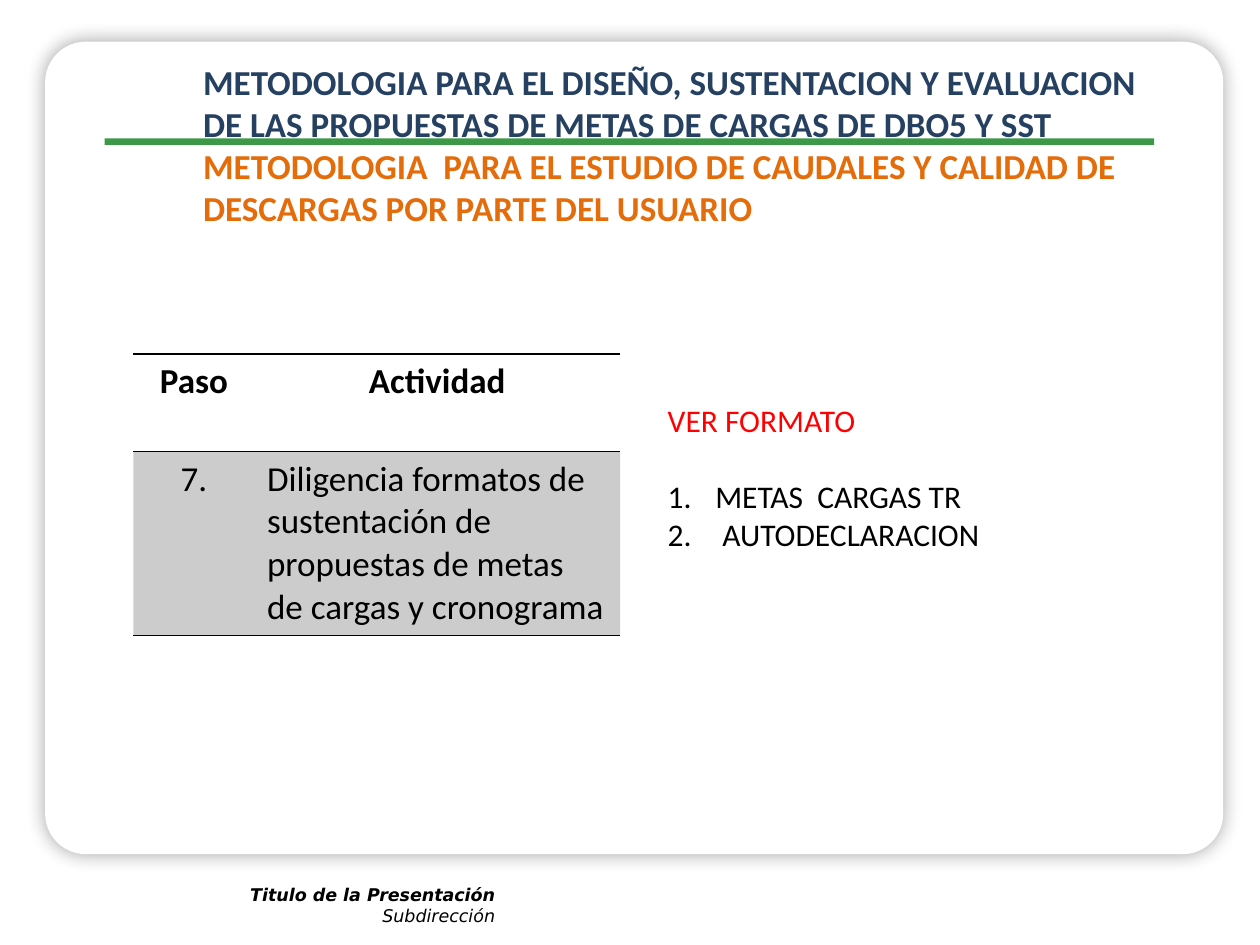
from lxml.etree import SubElement
from pptx import Presentation
from pptx.dml.color import RGBColor
from pptx.enum.shapes import MSO_SHAPE as Shape
from pptx.enum.text import MSO_ANCHOR as Anchor, PP_ALIGN as Align
from pptx.oxml import parse_xml
from pptx.oxml.ns import nsdecls, qn
from pptx.util import Cm, Pt

COLORS = {
    "white": "FFFFFF",
    "green": "3D9948",
    "navy": "254061",
    "orange": "E46C0A",
    "red": "FF0000",
    "black": "000000",
}


def style(font, color, **values):
    """Colour a font and set its other attributes."""
    font.color.rgb = RGBColor.from_string(COLORS[color])
    for attribute, value in values.items():
        setattr(font, attribute, value)


def set_border(cell, position, side, visible):
    """Put a 1 pt black or invisible line on one side of a cell."""
    if visible:
        paint = f'<a:solidFill><a:srgbClr val="{COLORS["black"]}"/></a:solidFill>'
    else:
        paint = "<a:noFill/>"
    line = f'<a:ln{side} {nsdecls("a")} w="12700">{paint}</a:ln{side}>'
    cell._tc.get_or_add_tcPr().insert(position, parse_xml(line))


prs = Presentation()
prs.slide_width, prs.slide_height = Cm(25.4), Cm(19.05)
slide = prs.slides.add_slide(prs.slide_layouts[5])
shapes = slide.shapes

# Panel with a soft shadow, and the green rule
panel = shapes.add_shape(Shape.ROUNDED_RECTANGLE, Cm(0.91), Cm(0.84), Cm(23.75), Cm(16.38))
panel.adjustments[0] = 0.05
rule = shapes.add_shape(Shape.RECTANGLE, Cm(2.11), Cm(2.79), Cm(21.16), Cm(0.13))
for part, color in ((panel, "white"), (rule, "green")):
    part.shadow.inherit = False
    part.fill.solid()
    part.fill.fore_color.rgb = RGBColor.from_string(COLORS[color])
    part.line.fill.background()
panel_effects = panel._element.spPr.find(qn("a:effectLst"))
panel_effects.append(parse_xml(
    f'<a:outerShdw {nsdecls("a")} blurRad="{Pt(10.8)}" dist="0" dir="5400000">'
    f'<a:srgbClr val="{COLORS["black"]}"><a:alpha val="35000"/></a:srgbClr></a:outerShdw>'
))

# Footer
footer = shapes.add_textbox(Cm(2.03), Cm(17.7), Cm(8.2), Cm(1.12)).text_frame
footer.word_wrap = True
footer.text = "Titulo de la Presentación\nSubdirección"
for paragraph, bold in zip(footer.paragraphs, (True, False)):
    paragraph.alignment = Align.RIGHT
    style(paragraph.runs[0].font, "black", name="DejaVu Sans", size=Pt(10), bold=bold, italic=True)

# Title, brought in front of the rule
title = shapes.title
title.left, title.top, title.width, title.height = Cm(3.84), Cm(1.09), Cm(19.46), Cm(2.97)
title.text_frame.vertical_anchor = Anchor.TOP
title.text_frame.word_wrap = True
heading = title.text_frame.paragraphs[0]
heading.alignment = Align.LEFT
methods = (
    ("METODOLOGIA PARA EL DISEÑO, SUSTENTACION Y EVALUACION "
     "DE LAS PROPUESTAS DE METAS DE CARGAS DE DBO5 Y SST", "navy"),
    ("METODOLOGIA  PARA EL ESTUDIO DE CAUDALES Y CALIDAD DE "
     "DESCARGAS POR PARTE DEL USUARIO", "orange"),
)
for index, (method, color) in enumerate(methods):
    if index:
        heading.add_line_break()
    run = heading.add_run()
    run.text = method
    style(run.font, color, name="Calibri", size=Pt(20), bold=True)
shapes._spTree.append(title._element)

# Steps table
steps = (
    ("Paso", "Actividad"),
    ("7.", "Diligencia formatos de sustentación de propuestas de metas de cargas y cronograma"),
)
table = shapes.add_table(2, 2, Cm(2.69), Cm(7.14), Cm(9.81), Cm(5.59)).table
table.horz_banding = False
for column, width in zip(table.columns, (2.44, 7.37)):
    column.width = Cm(width)
for row, height in zip(table.rows, (1.96, 3.63)):
    row.height = Cm(height)
for r, step in enumerate(steps):
    for c, text in enumerate(step):
        cell = table.cell(r, c)
        cell.text = text
        paragraph = cell.text_frame.paragraphs[0]
        paragraph.alignment = Align.LEFT if (r, c) == (1, 1) else Align.CENTER
        style(paragraph.runs[0].font, "black", name="Calibri", size=Pt(20), bold=r == 0)
        if r == 0:
            cell.fill.background()
        else:
            cell.fill.solid()
            cell.fill.fore_color.rgb = RGBColor.from_string(COLORS["black"])
            tint = cell._tc.tcPr.find(qn("a:solidFill"))[0]
            SubElement(tint, qn("a:alpha"), val="20000")
        for position, side in enumerate("LRTB"):
            set_border(cell, position, side, side in "TB")

# Formats to see
formats = shapes.add_textbox(Cm(13.21), Cm(7.95), Cm(11.38), Cm(3.33)).text_frame
formats.word_wrap = True
formats.text = "VER FORMATO\nMETAS  CARGAS TR\n AUTODECLARACION"
label, *items = formats.paragraphs
style(label.runs[0].font, "red", name="Calibri", size=Pt(18))
for item in items:
    properties = item._p.get_or_add_pPr()
    properties.set("marL", str(Cm(0.96)))
    properties.set("indent", str(-Cm(0.96)))
    SubElement(properties, qn("a:buFont"), typeface="+mj-lt")
    SubElement(properties, qn("a:buAutoNum"), type="arabicPeriod")
    style(item.runs[0].font, "black", name="Calibri", size=Pt(18))
items[0].space_before = Pt(22)

prs.save("out.pptx")
